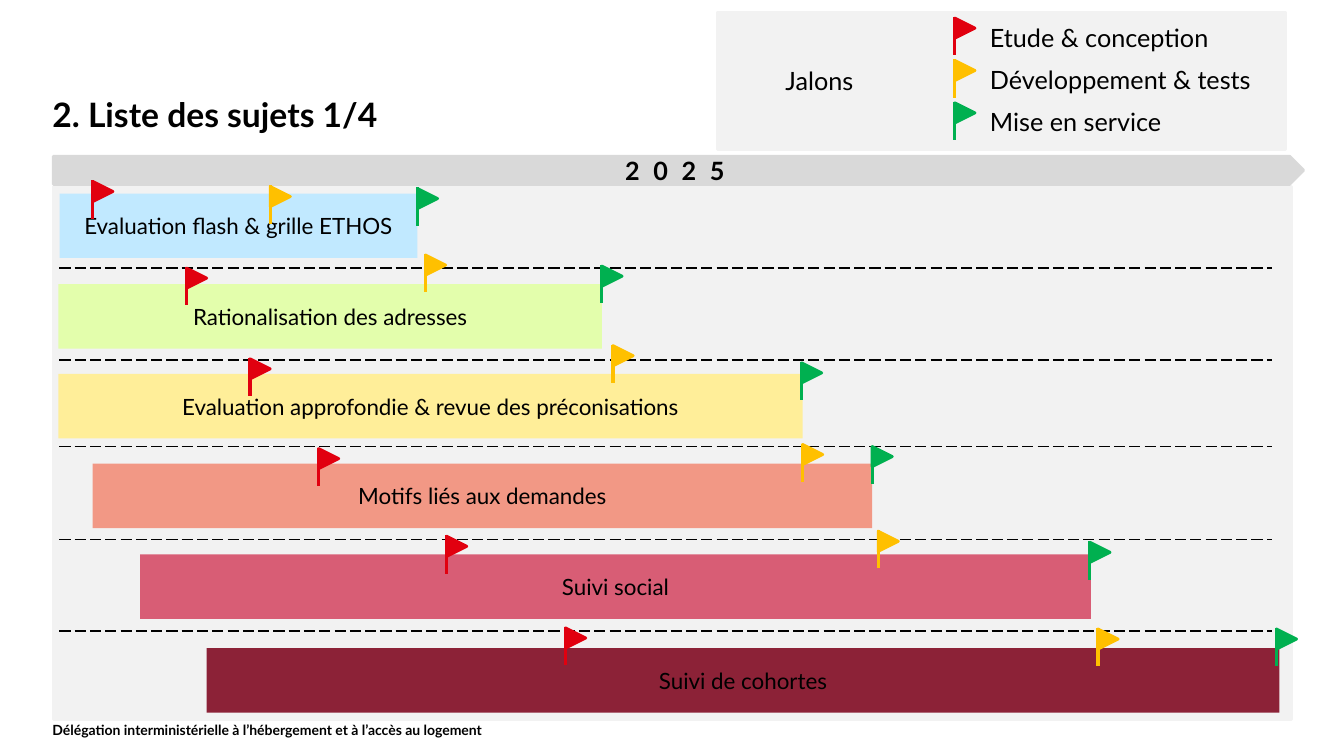
import pptx
import pptx.util
import pptx.dml.color
import pptx.enum.dml
import pptx.enum.shapes
import pptx.enum.text
import pptx.oxml
import pptx.oxml.ns
from dataclasses import dataclass

SCALE = 9144
KIND = pptx.enum.shapes.MSO_SHAPE
LINK = pptx.enum.shapes.MSO_CONNECTOR
ALIGN = pptx.enum.text.PP_ALIGN
ANCHOR = pptx.enum.text.MSO_ANCHOR


@dataclass(frozen=True)
class Theme:
    font: str = "Lato"
    ink: str = "000000"
    panel: str = "F2F2F2"
    band: str = "D9D9D9"
    study: str = "E1000F"
    build: str = "FFC000"
    live: str = "00B050"
    title: int = 24
    head: int = 18
    task: int = 16
    foot: int = 10


THEME = Theme()
STAGES = [
    ("Etude & conception", THEME.study),
    ("Développement & tests", THEME.build),
    ("Mise en service", THEME.live),
]
TASKS = [
    ("Evaluation flash & grille ETHOS", "C1E9FF", (59, 192, 355),
     [(92, 179), (268, 184), (414, 186)]),
    ("Rationalisation des adresses", "E3FEAC", (58, 282, 539),
     [(185, 265), (422, 252), (597, 263)]),
    ("Evaluation approfondie & revue des préconisations", "FFEE99", (58, 371, 738),
     [(248, 355), (608, 342), (795, 359)]),
    ("Motifs liés aux demandes", "F29885", (92, 460, 773),
     [(316, 444), (796, 440), (865, 442)]),
    ("Suivi social", "D85D75", (139, 550, 943),
     [(443, 531), (871, 526), (1081, 537)]),
    ("Suivi de cohortes", "8C2237", (205, 643, 1064),
     [(561, 622), (1089, 623), (1266, 623)]),
]
RULES = [266, 357, 443, 535, 626]


def px(*sides):
    return [pptx.util.Emu(side * SCALE) for side in sides]


def tint(code):
    return pptx.dml.color.RGBColor.from_string(code)


def write(shape, text, size, bold=False, align=ALIGN.LEFT, anchor=ANCHOR.MIDDLE):
    frame = shape.text_frame
    frame.word_wrap = True
    frame.vertical_anchor = anchor
    frame.text = text
    line = frame.paragraphs[0]
    line.alignment = align
    font = line.runs[0].font
    font.name = THEME.font
    font.size = pptx.util.Pt(size)
    font.bold = bold
    font.color.rgb = tint(THEME.ink)
    return frame


def block(shapes, kind, box, fill, edge=True):
    shape = shapes.add_shape(kind, *px(*box))
    shape.shadow.inherit = False
    shape.fill.solid()
    shape.fill.fore_color.rgb = tint(fill)
    if edge:
        shape.line.color.rgb = tint(fill)
        shape.line.width = pptx.util.Pt(2)
        shape.line._get_or_add_ln().append(pptx.oxml.parse_xml(
            "<a:round %s/>" % pptx.oxml.ns.nsdecls("a")))
    else:
        shape.line.fill.background()
    return shape


def stroke(shapes, ends, color, width):
    line = shapes.add_connector(LINK.STRAIGHT, *px(*ends))
    line.line.color.rgb = tint(color)
    line.line.width = pptx.util.Pt(width)
    line._element.spPr.append(pptx.oxml.parse_xml(
        "<a:effectLst %s/>" % pptx.oxml.ns.nsdecls("a")))
    return line


def label(shapes, box, text, size, flush=False, **style):
    shape = shapes.add_textbox(*px(*box))
    frame = write(shape, text, size, **style)
    if flush:
        frame.margin_left = frame.margin_right = 0
        frame.margin_top = frame.margin_bottom = 0
    return frame


def flag(shapes, left, top, color):
    group = shapes.add_group_shape().shapes
    stroke(group, (left, top, left, top + 38), color, 2.25)
    cloth = block(group, KIND.ISOSCELES_TRIANGLE, (left, top + 1, 20, 20), color)
    cloth.rotation = 90


def legend(shapes):
    panel = block(shapes, KIND.RECTANGLE, (712, 12, 563, 136), THEME.panel)
    write(panel, "Jalons", THEME.head).margin_left = px(67)[0]
    for row, (name, color) in enumerate(STAGES):
        top = 17 + 42 * row
        flag(shapes, 947, top, color)
        label(shapes, (972, top, 321, 40), name, THEME.head)


def chart(shapes):
    block(shapes, KIND.RECTANGLE, (53, 185, 1228, 529), THEME.panel)
    for top in RULES:
        rule = stroke(shapes, (59, top, 1262, top), THEME.ink, 1)
        rule.line.dash_style = pptx.enum.dml.MSO_LINE.LONG_DASH
    for name, color, (left, top, width), _ in TASKS:
        bar = block(shapes, KIND.RECTANGLE, (left, top, width, 64), color, False)
        write(bar, name, THEME.task, align=ALIGN.CENTER)
    year = block(shapes, KIND.PENTAGON, (53, 155, 1240, 28), THEME.band)
    frame = write(year, "2 0 2 5", THEME.head, bold=True, align=ALIGN.CENTER)
    frame.paragraphs[0].runs[0].font._element.set("spc", "270")
    for _, _, _, marks in TASKS:
        for (left, top), (_, color) in zip(marks, STAGES):
            flag(shapes, left, top, color)


def main():
    deck = pptx.Presentation()
    deck.slide_width, deck.slide_height = px(1333, 750)
    shapes = deck.slides.add_slide(deck.slide_layouts[6]).shapes
    title = label(shapes, (52, 98, 640, 50), "2. Liste des sujets 1/4", THEME.title,
                  flush=True, bold=True, anchor=ANCHOR.TOP)
    title.paragraphs[0].line_spacing = 0.9
    label(shapes, (52, 698, 861, 52),
          "Délégation interministérielle à l’hébergement et à l’accès au logement",
          THEME.foot, flush=True, bold=True)
    legend(shapes)
    chart(shapes)
    deck.save("out.pptx")


if __name__ == "__main__":
    main()
